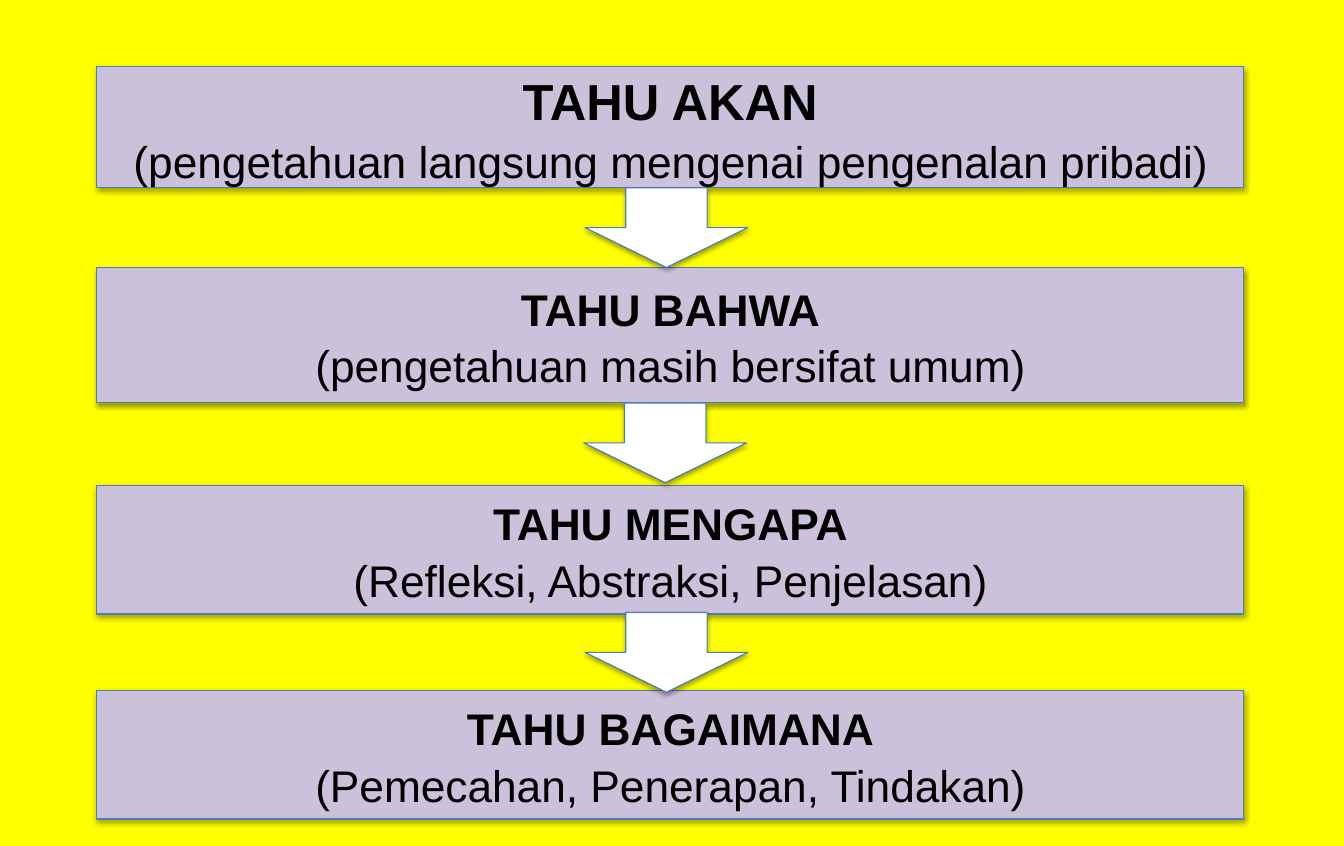
from lxml import etree
from pptx import Presentation
from pptx.dml.color import RGBColor
from pptx.enum.shapes import MSO_SHAPE as SHAPE
from pptx.enum.text import MSO_ANCHOR as ANCHOR, PP_ALIGN as ALIGN
from pptx.oxml.ns import qn
from pptx.util import Pt

YELLOW = RGBColor(0xFF, 0xFF, 0x00)
LILAC = RGBColor(0xCC, 0xC1, 0xDA)
BLUE = RGBColor(0x4B, 0x7E, 0xBC)
WHITE = RGBColor(0xFF, 0xFF, 0xFF)
BLACK = RGBColor(0x00, 0x00, 0x00)

BOX_LEFT, BOX_WIDTH = 61.2, 725.8
ARROW_WIDTH, ARROW_HEIGHT = 103, 50.4

STEPS = [
    (41.8, 76.8, 32, "TAHU AKAN", "(pengetahuan langsung mengenai pengenalan pribadi)"),
    (169.2, 85.2, 28, "TAHU BAHWA", "(pengetahuan masih bersifat umum)"),
    (307, 81.4, 28, "TAHU MENGAPA", "(Refleksi, Abstraksi, Penjelasan)"),
    (436.6, 81.4, 28, "TAHU BAGAIMANA", "(Pemecahan, Penerapan, Tindakan)"),
]
ARROWS = [(370.2, 118.8), (369.4, 254.9), (370.2, 387.4)]


def add_block(kind, left, top, width, height, color):
    sp = s.shapes.add_shape(kind, Pt(left), Pt(top), Pt(width), Pt(height))
    sp.fill.solid()
    sp.fill.fore_color.rgb = color
    sp.line.color.rgb = BLUE
    sp.line.width = Pt(0.75)
    sp.shadow.inherit = False
    effects = sp._element.spPr.find(qn("a:effectLst"))
    shadow = etree.SubElement(effects, qn("a:outerShdw"), blurRad=str(Pt(3.1)),
                              dist=str(Pt(1.8)), dir="5400000", rotWithShape="0")
    tint = etree.SubElement(shadow, qn("a:srgbClr"), val=str(BLACK))
    etree.SubElement(tint, qn("a:alpha"), val="35000")
    return sp


prs = Presentation()
prs.slide_width, prs.slide_height = Pt(850.4), Pt(535)
s = prs.slides.add_slide(prs.slide_layouts[6])
s.background.fill.solid()
s.background.fill.fore_color.rgb = YELLOW

for top, height, title_size, title, detail in STEPS:
    sp = add_block(SHAPE.RECTANGLE, BOX_LEFT, top, BOX_WIDTH, height, LILAC)
    tf = sp.text_frame
    tf.word_wrap = True
    tf.vertical_anchor = ANCHOR.MIDDLE
    lines = [
        (title, {"size": Pt(title_size), "bold": True, "name": "Arial"}),
        (detail, {"size": Pt(28), "bold": False, "name": "Arial"}),
    ]
    for i, (text, font) in enumerate(lines):
        p = tf.add_paragraph() if i else tf.paragraphs[0]
        p.alignment = ALIGN.CENTER
        p.line_spacing = 1.06
        r = p.add_run()
        r.text = text
        r.font.color.rgb = BLACK
        for key, value in font.items():
            setattr(r.font, key, value)

for left, top in ARROWS:
    add_block(SHAPE.DOWN_ARROW, left, top, ARROW_WIDTH, ARROW_HEIGHT, WHITE)

prs.save("out.pptx")
